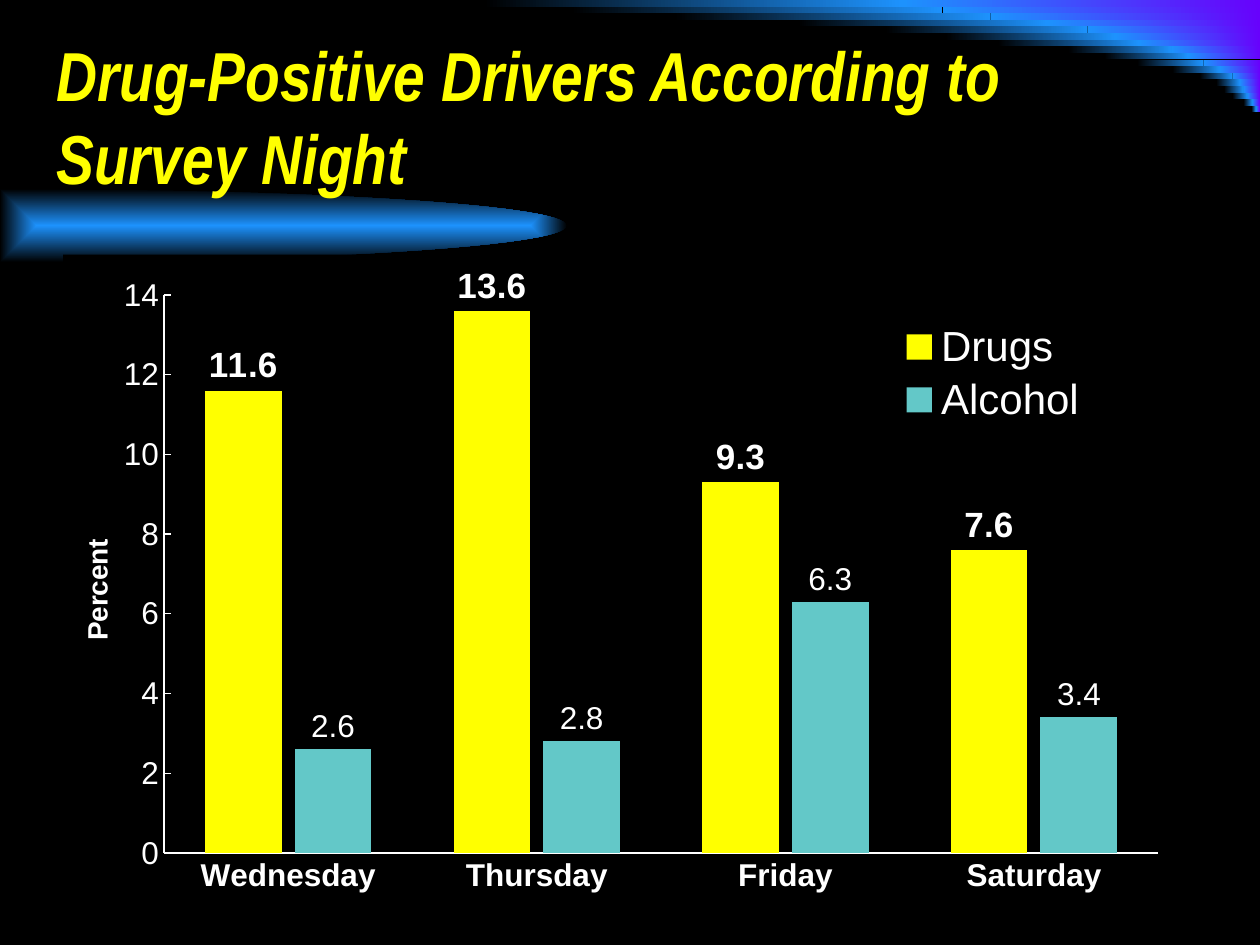
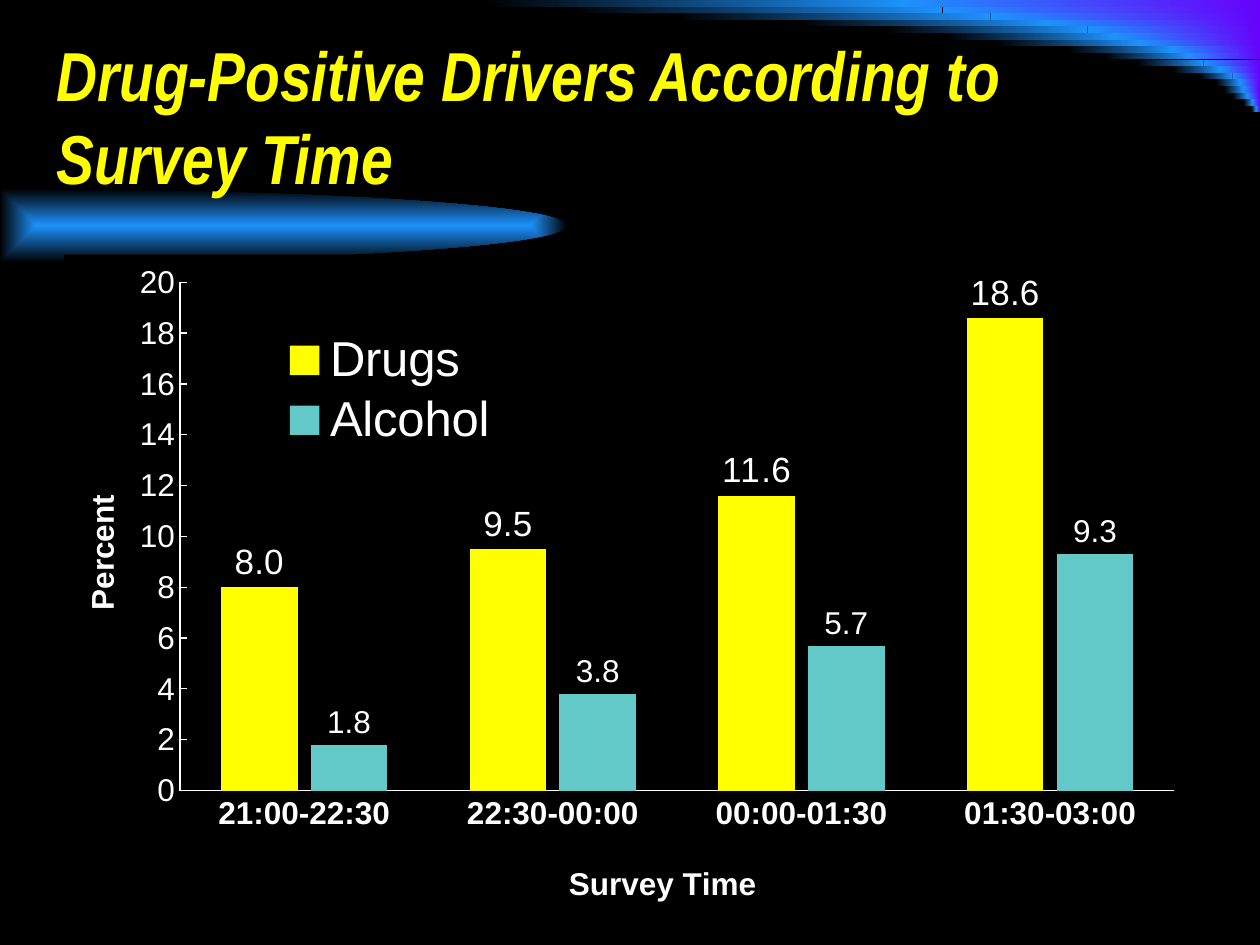
from dataclasses import dataclass
from math import cos, pi, sin

from lxml.etree import SubElement
from pptx import Presentation
from pptx.chart.data import CategoryChartData
from pptx.dml.color import RGBColor
from pptx.enum.chart import XL_CHART_TYPE, XL_LABEL_POSITION, XL_LEGEND_POSITION, XL_TICK_MARK
from pptx.enum.shapes import MSO_SHAPE
from pptx.enum.text import MSO_ANCHOR
from pptx.oxml import parse_xml
from pptx.oxml.ns import nsdecls, qn
from pptx.util import Pt

# Shared look
BLACK, WHITE, YELLOW = "000000", "FFFFFF", "FFFF00"
BLUE, VIOLET, TEAL = "1D92FD", "6702FC", "63C8C8"
PAGE_WIDTH, PAGE_HEIGHT = 720, 540

# Violet widths of the corner sweep, top row first; the blue part is always 1.17 times as wide
SWEEP_WIDTHS = (204.5, 181.4, 154.1, 121.7, 98.6, 82.8, 69.1, 50.4, 41,
                32.4, 23, 15.8, 11.5, 9.4, 7.2, 4.3, 2.2)
SWEEP_ROW = 3.78
BLUE_RATIO = 1.17


@dataclass
class AxisTitle:
    text: str
    size: int
    left: float
    top: float


@dataclass
class SurveyChart:
    title: str
    frame: tuple[float, ...]  # left, top, width, height in points
    plot: tuple[float, ...]  # the rest are fractions of the chart
    legend: tuple[float, ...]
    legend_side: XL_LEGEND_POSITION
    legend_size: int
    categories: tuple[str, ...]
    drugs: tuple[float, ...]
    alcohol: tuple[float, ...]
    maximum: int
    bold_drugs: bool
    value_title: AxisTitle
    category_title: AxisTitle | None = None


CHARTS = (
    SurveyChart(
        title="Drug-Positive Drivers According to Survey Night",
        frame=(36, 145.44, 648, 385.2),
        plot=(0.089, 0.06, 0.877, 0.828),
        legend=(0.735, 0.094, 0.17, 0.165),
        legend_side=XL_LEGEND_POSITION.RIGHT,
        legend_size=24,
        categories=("Wednesday", "Thursday", "Friday", "Saturday"),
        drugs=(11.6, 13.6, 9.3, 7.6),
        alcohol=(2.6, 2.8, 6.3, 3.4),
        maximum=14,
        bold_drugs=True,
        value_title=AxisTitle("Percent", 16, 0.01, 0.415),
    ),
    SurveyChart(
        title="Drug-Positive Drivers According to Survey Time",
        frame=(36.72, 145.44, 648, 378.72),
        plot=(0.102, 0.042, 0.877, 0.767),
        legend=(0.187, 0.11, 0.2, 0.19),
        legend_side=XL_LEGEND_POSITION.LEFT,
        legend_size=28,
        categories=("21:00-22:30", "22:30-00:00", "00:00-01:30", "01:30-03:00"),
        drugs=(8, 9.5, 11.6, 18.6),
        alcohol=(1.8, 3.8, 5.7, 9.3),
        maximum=20,
        bold_drugs=False,
        value_title=AxisTitle("Percent", 18, 0.01, 0.354),
        category_title=AxisTitle("Survey Time", 18, 0.44, 0.91),
    ),
)


def color(value: str) -> RGBColor:
    return RGBColor.from_string(value)


def set_font(font, size: float, bold: bool = False, name: str = "Arial",
             tint: str = WHITE, italic: bool = False) -> None:
    font.name, font.size = name, Pt(size)
    font.bold, font.italic = bold, italic
    font.color.rgb = color(tint)


def paint_gradient(shape, start: str, end: str) -> None:
    shape.shadow.inherit = False
    shape.line.fill.background()
    shape.fill.gradient()
    shape.fill.gradient_angle = 0
    for stop, tint in zip(shape.fill.gradient_stops, (start, end)):
        stop.color.rgb = color(tint)


def add_strip(page, left: float, top: float, width: float, start: str, end: str) -> None:
    strip = page.shapes.add_shape(MSO_SHAPE.RECTANGLE, Pt(left), Pt(top), Pt(width), Pt(SWEEP_ROW))
    paint_gradient(strip, start, end)


def add_corner_sweep(page) -> None:
    for row, width in enumerate(SWEEP_WIDTHS):
        top = row * SWEEP_ROW
        middle = PAGE_WIDTH - width
        add_strip(page, middle, top, width, BLUE, VIOLET)
        add_strip(page, middle - BLUE_RATIO * width, top, BLUE_RATIO * width, BLACK, BLUE)


def add_title_band(page) -> None:
    """Half ellipse under the title, glowing from its centre."""
    width, top, radius, steps = 324, 108, 20.9, 60
    outline = [(Pt(width * sin(pi * step / steps)),
                Pt(top + radius * (1 - cos(pi * step / steps)))) for step in range(steps + 1)]
    builder = page.shapes.build_freeform(*outline[0])
    builder.add_line_segments(outline[1:], close=True)
    band = builder.convert_to_shape()
    paint_gradient(band, BLUE, BLACK)
    linear = band._element.spPr.find(".//" + qn("a:lin"))
    linear.getparent().replace(linear, parse_xml(
        f'<a:path {nsdecls("a")} path="shape">'
        '<a:fillToRect l="50000" t="50000" r="50000" b="50000"/></a:path>'))


def add_title(page, text: str) -> None:
    box = page.shapes.add_textbox(Pt(25.2), Pt(20.88), Pt(612), Pt(90))
    box.text_frame.word_wrap = True
    box.text_frame.vertical_anchor = MSO_ANCHOR.MIDDLE
    para = box.text_frame.paragraphs[0]
    para.text = text
    set_font(para.font, 39.6, True, "Arial Narrow", YELLOW, italic=True)


def place(part, fractions: tuple[float, ...], inner: bool = False) -> None:
    """Give a chart part a manual position, and a size if there are four fractions."""
    for old in part.findall(qn("c:layout")):
        part.remove(old)
    layout = parse_xml(f'<c:layout {nsdecls("c")}><c:manualLayout/></c:layout>')
    settings = [("layoutTarget", "inner")] if inner else []
    settings += [("xMode", "edge"), ("yMode", "edge")]
    settings += zip("xywh", map(str, fractions))
    for name, value in settings:
        SubElement(layout[0], qn(f"c:{name}")).set("val", value)
    overlay = part.find(qn("c:overlay"))
    if overlay is None:
        part.insert(0, layout)
    else:
        overlay.addprevious(layout)


def add_axis_title(axis, title: AxisTitle, upright: bool = False) -> None:
    frame = axis.axis_title.text_frame
    para = frame.paragraphs[0]
    para.text = title.text
    set_font(para.font, title.size, True)
    element = axis.axis_title._element
    if upright:
        body = element.find(".//" + qn("a:bodyPr"))
        body.set("rot", "-5400000")
        body.set("vert", "horz")
    place(element, (title.left, title.top))


def style_axis(axis, tick: XL_TICK_MARK, bold: bool) -> None:
    axis.has_major_gridlines = False
    axis.major_tick_mark = tick
    axis.minor_tick_mark = XL_TICK_MARK.NONE
    axis.format.line.color.rgb = color(WHITE)
    axis.format.line.width = Pt(0.75)
    set_font(axis.tick_labels.font, 18, bold)


def style_series(series, tint: str, size: int, bold: bool) -> None:
    series.format.fill.solid()
    series.format.fill.fore_color.rgb = color(tint)
    series.invert_if_negative = False
    labels = series.data_labels
    labels.show_value = True
    labels.number_format = "0.0"
    labels.number_format_is_linked = False
    labels.position = XL_LABEL_POSITION.OUTSIDE_END
    set_font(labels.font, size, bold)


def add_survey_chart(page, survey: SurveyChart) -> None:
    data = CategoryChartData()
    data.categories = survey.categories
    data.add_series("Drugs", survey.drugs)
    data.add_series("Alcohol", survey.alcohol)
    chart = page.shapes.add_chart(
        XL_CHART_TYPE.COLUMN_CLUSTERED, *map(Pt, survey.frame), data).chart
    chart.has_title = False
    set_font(chart.font, 10)

    # Black chart area, fixed plot area
    space = chart._chartSpace
    space.find(qn("c:txPr")).addprevious(parse_xml(
        f'<c:spPr {nsdecls("c", "a")}><a:solidFill><a:srgbClr val="{BLACK}"/></a:solidFill>'
        '<a:ln><a:noFill/></a:ln></c:spPr>'))
    place(space.find(".//" + qn("c:plotArea")), survey.plot, inner=True)

    # Columns
    plot = chart.plots[0]
    plot.vary_by_categories = False
    plot.gap_width, plot.overlap = 107, -17
    drugs, alcohol = plot.series
    style_series(drugs, YELLOW, 20, survey.bold_drugs)
    style_series(alcohol, TEAL, 18, False)

    # Axes
    style_axis(chart.category_axis, XL_TICK_MARK.NONE, True)
    style_axis(chart.value_axis, XL_TICK_MARK.INSIDE, False)
    chart.value_axis.minimum_scale = 0
    chart.value_axis.maximum_scale = survey.maximum
    chart.value_axis.major_unit = 2
    add_axis_title(chart.value_axis, survey.value_title, upright=True)
    if survey.category_title:
        add_axis_title(chart.category_axis, survey.category_title)

    # Legend
    chart.has_legend = True
    chart.legend.position = survey.legend_side
    chart.legend.include_in_layout = False
    set_font(chart.legend.font, survey.legend_size)
    place(chart.legend._element, survey.legend)


def main() -> None:
    deck = Presentation()
    deck.slide_width, deck.slide_height = Pt(PAGE_WIDTH), Pt(PAGE_HEIGHT)
    background = deck.slide_master.background.fill
    background.solid()
    background.fore_color.rgb = color(BLACK)
    for survey in CHARTS:
        page = deck.slides.add_slide(deck.slide_layouts[6])
        add_corner_sweep(page)
        add_title_band(page)
        add_title(page, survey.title)
        add_survey_chart(page, survey)
    deck.save("out.pptx")


if __name__ == "__main__":
    main()
